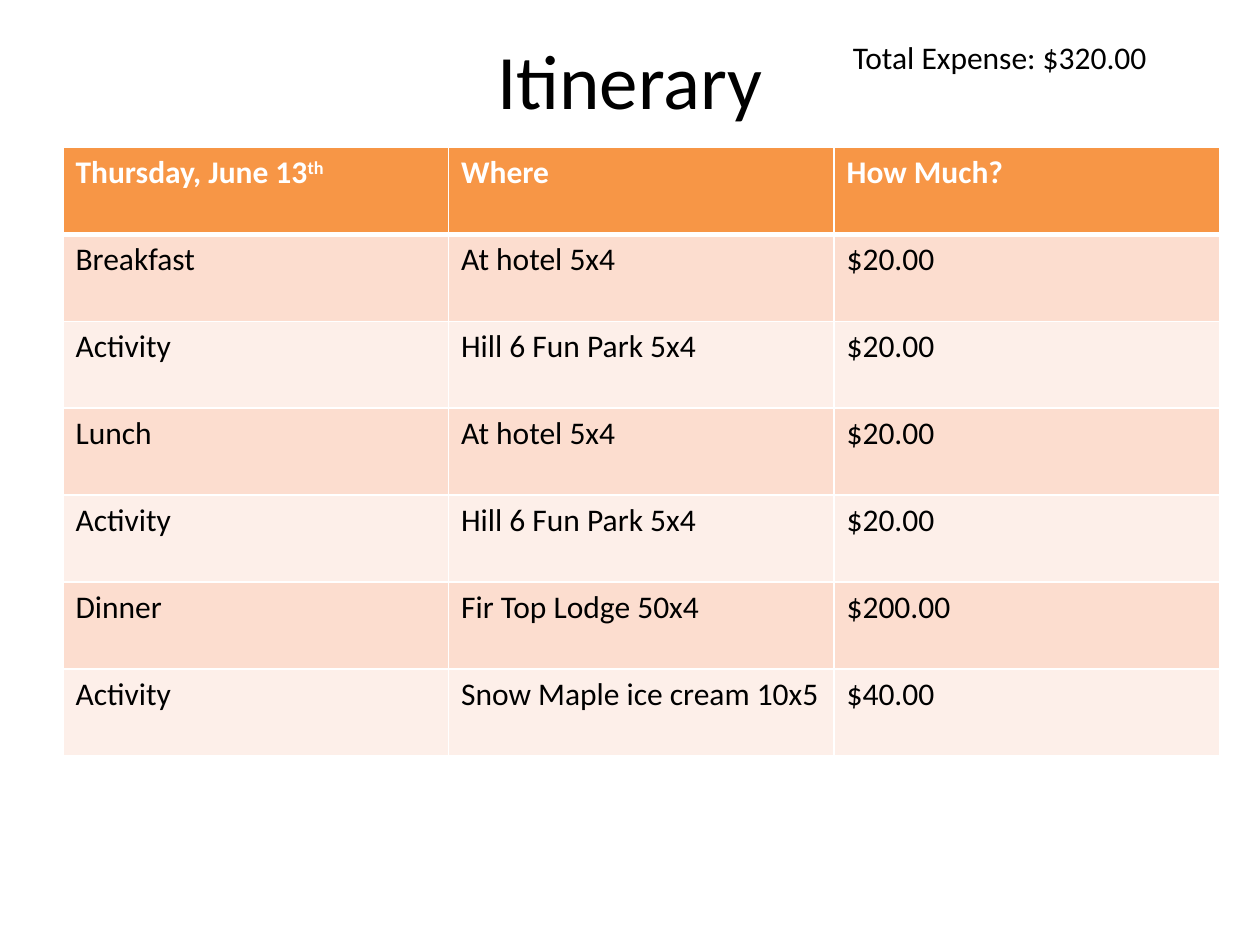
from typing import NamedTuple

from pptx import Presentation
from pptx import util as u
from pptx.dml.color import RGBColor
from pptx.enum import text
from pptx.oxml import ns
from lxml import etree

FONT = "Calibri"
BLACK, WHITE, ORANGE = "000000", "FFFFFF", "F79646"
BANDS = ("FCDDCF", "FDEFE9")
COLUMN_WIDTH, ROW_HEIGHT = 3.06, 0.69


class Label(NamedTuple):
    words: str
    left: float
    top: float
    width: float
    height: float
    size: int
    align: text.PP_ALIGN
    anchor: text.MSO_ANCHOR


class Entry(NamedTuple):
    what: str
    where: str
    cost: str


LABELS = (
    Label("Itinerary", 0.5, 0, 9, 1.25, 44,
          text.PP_ALIGN.CENTER, text.MSO_ANCHOR.MIDDLE),
    Label("Total Expense: $320.00", 6.67, 0.25, 3.08, 0.4, 18,
          text.PP_ALIGN.LEFT, text.MSO_ANCHOR.TOP),
)
HEADER = Entry("Thursday, June 13", "Where", "How Much?")
ENTRIES = (
    Entry("Breakfast", "At hotel 5x4", "$20.00"),
    Entry("Activity", "Hill 6 Fun Park 5x4", "$20.00"),
    Entry("Lunch", "At hotel 5x4", "$20.00"),
    Entry("Activity", "Hill 6 Fun Park 5x4", "$20.00"),
    Entry("Dinner", "Fir Top Lodge 50x4", "$200.00"),
    Entry("Activity", "Snow Maple ice cream 10x5", "$40.00"),
)


def color(value: str) -> RGBColor:
    return RGBColor.from_string(value)


def style(para, size: int, ink: str, bold: bool = False) -> None:
    para.font.name = FONT
    para.font.size = u.Pt(size)
    para.font.bold = bold
    para.font.color.rgb = color(ink)


def draw_label(page, label: Label) -> None:
    box = page.shapes.add_textbox(*map(u.Inches, label[1:5]))
    frame = box.text_frame
    frame.word_wrap = True
    frame.vertical_anchor = label.anchor
    para = frame.paragraphs[0]
    para.text = label.words
    para.alignment = label.align
    style(para, label.size, BLACK)


def draw_borders(cell, bottom: int) -> None:
    properties = cell._tc.get_or_add_tcPr()
    for side, points in (("L", 1), ("R", 1), ("T", 1), ("B", bottom)):
        line = etree.SubElement(properties, ns.qn(f"a:ln{side}"),
                                w=str(u.Pt(points)))
        fill = etree.SubElement(line, ns.qn("a:solidFill"))
        etree.SubElement(fill, ns.qn("a:srgbClr"), val=WHITE)


def draw_row(table, index: int, entry: Entry) -> None:
    is_header = index == 0
    table.rows[index].height = u.Inches(ROW_HEIGHT)
    for cell, words in zip(table.rows[index].cells, entry):
        draw_borders(cell, 3 if is_header else 1)
        cell.fill.solid()
        cell.fill.fore_color.rgb = color(
            ORANGE if is_header else BANDS[(index - 1) % 2])
        para = cell.text_frame.paragraphs[0]
        para.add_run().text = words
        style(para, 18, WHITE if is_header else BLACK, is_header)


def draw_table(page) -> None:
    rows = (HEADER, *ENTRIES)
    columns = len(HEADER)
    table = page.shapes.add_table(
        len(rows), columns, u.Inches(0.5), u.Inches(1.17),
        u.Inches(COLUMN_WIDTH * columns),
        u.Inches(ROW_HEIGHT * len(rows))).table
    for column in table.columns:
        column.width = u.Inches(COLUMN_WIDTH)
    for index, entry in enumerate(rows):
        draw_row(table, index, entry)

    # Raised ordinal after the date
    span = table.cell(0, 0).text_frame.paragraphs[0].add_run()
    span.text = "th"
    span.font._element.set("baseline", "30000")


def main() -> None:
    deck = Presentation()
    deck.slide_width, deck.slide_height = u.Inches(10), u.Inches(7.5)
    page = deck.slides.add_slide(deck.slide_layouts[6])

    # Title and total
    for label in LABELS:
        draw_label(page, label)

    # Day plan
    draw_table(page)
    deck.save("out.pptx")


if __name__ == "__main__":
    main()
